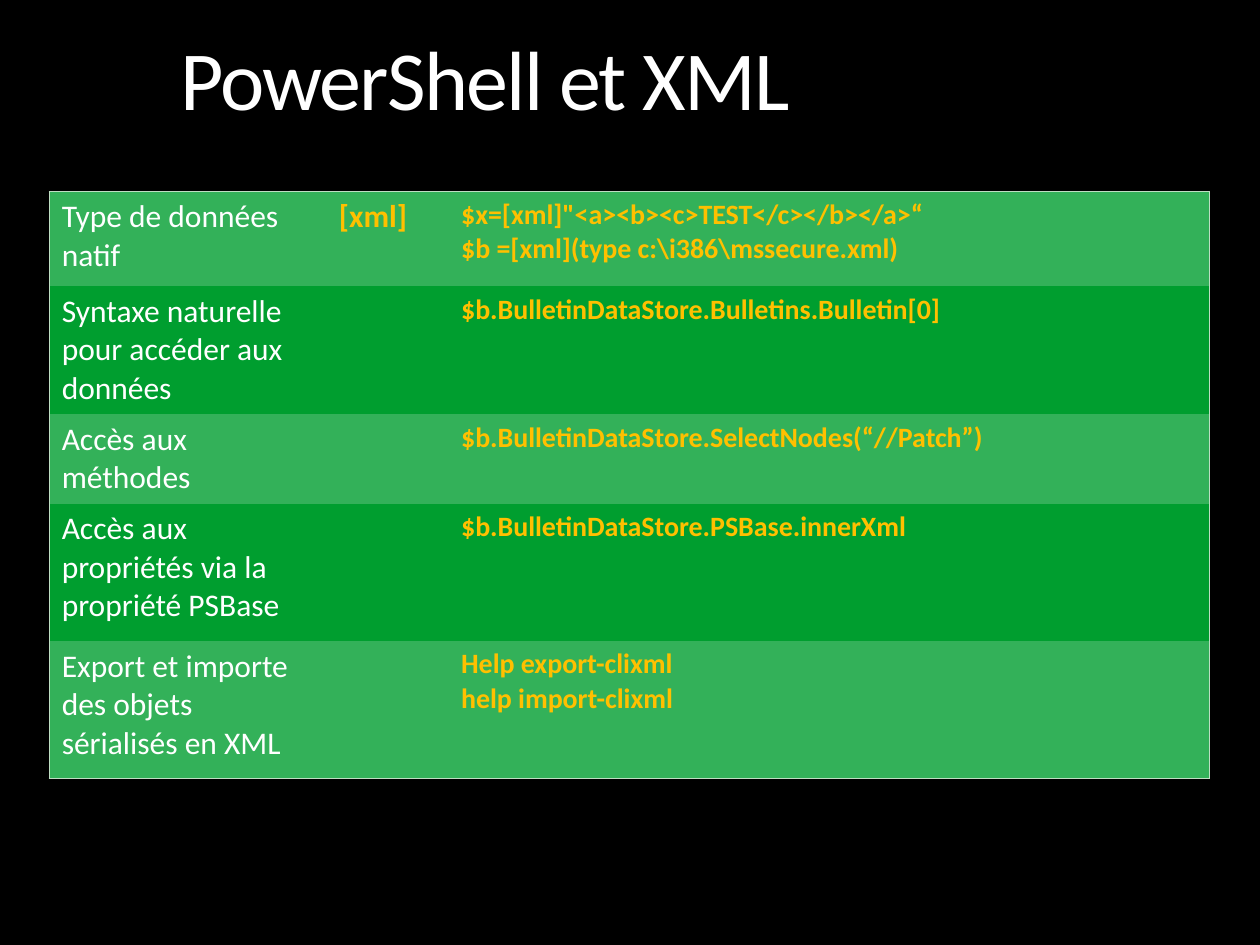
"""Build the slide on PowerShell and XML: a title above a green three-column table."""
from lxml import etree
from pptx import Presentation
from pptx.dml.color import RGBColor
from pptx.enum import text
from pptx.oxml import ns
from pptx.util import Inches, Pt

TITLE = "PowerShell et XML"
FEATURES = [
    ("Type de données natif", "[xml]",
     ['$x=[xml]"<a><b><c>TEST</c></b></a>“', r"$b =[xml](type c:\i386\mssecure.xml)"]),
    ("Syntaxe naturelle pour accéder aux données", "",
     ["$b.BulletinDataStore.Bulletins.Bulletin[0]"]),
    ("Accès aux méthodes", "",
     ["$b.BulletinDataStore.SelectNodes(“//Patch”)"]),
    ("Accès aux propriétés via la propriété PSBase", "",
     ["$b.BulletinDataStore.PSBase.innerXml"]),
    ("Export et importe des objets sérialisés en XML", "",
     ["Help export-clixml", "help import-clixml"]),
]
COLUMN_WIDTHS = [2.2, 0.97, 6.04]
ROW_HEIGHTS = [0.75, 0.94, 0.65, 1.09, 1.09]

FONT = "Calibri"
BLACK = RGBColor(0x00, 0x00, 0x00)
WHITE = RGBColor(0xFF, 0xFF, 0xFF)
GOLD = RGBColor(0xFF, 0xC0, 0x00)
GREEN = RGBColor(0x00, 0x9E, 0x2F)
LIGHT_GREEN = RGBColor(0x33, 0xB1, 0x59)
BORDER = RGBColor(0xBE, 0xDE, 0xC3)


def add_run(paragraph, words, size, color, bold=False):
    run = paragraph.add_run()
    run.text = words
    run.font.name, run.font.size, run.font.bold = FONT, Pt(size), bold
    run.font.color.rgb = color
    return run


def write_lines(cell, lines, size, color, bold):
    for number, line in enumerate(lines):
        paragraph = cell.text_frame.add_paragraph() if number else cell.text_frame.paragraphs[0]
        add_run(paragraph, line, size, color, bold)


def set_borders(cell, visible):
    properties = cell._tc.get_or_add_tcPr()
    for position, side in enumerate("LRTB"):
        line = etree.Element(ns.qn(f"a:ln{side}"), w=str(Pt(0.75)))
        if side in visible:
            fill = etree.SubElement(line, ns.qn("a:solidFill"))
            etree.SubElement(fill, ns.qn("a:srgbClr"), val=str(BORDER))
        else:
            etree.SubElement(line, ns.qn("a:noFill"))
        properties.insert(position, line)


def add_title(slide):
    title = slide.shapes.title
    title.left, title.top, title.width, title.height = map(Inches, (1.33, 0.25, 9, 1.25))
    title.text_frame.vertical_anchor = text.MSO_ANCHOR.TOP
    title.text_frame.auto_size = text.MSO_AUTO_SIZE.NONE
    heading = title.text_frame.paragraphs[0]
    heading.alignment = text.PP_ALIGN.LEFT
    heading.line_spacing = 0.9
    run = add_run(heading, TITLE, 48, WHITE)
    run.font._element.set("spc", "-100")


def add_feature_table(slide):
    last_row, last_column = len(FEATURES) - 1, len(COLUMN_WIDTHS) - 1
    table = slide.shapes.add_table(
        len(FEATURES), len(COLUMN_WIDTHS), Inches(0.39), Inches(1.52),
        Inches(sum(COLUMN_WIDTHS)), Inches(sum(ROW_HEIGHTS))).table
    table.first_row = table.horz_banding = False
    for column, width in zip(table.columns, COLUMN_WIDTHS):
        column.width = Inches(width)
    for r, (feature, keyword, examples) in enumerate(FEATURES):
        table.rows[r].height = Inches(ROW_HEIGHTS[r])
        write_lines(table.cell(r, 0), [feature], 18, WHITE, False)
        if keyword:
            write_lines(table.cell(r, 1), [keyword], 18, GOLD, True)
        write_lines(table.cell(r, 2), examples, 16, GOLD, True)
        for c in range(last_column + 1):
            cell = table.cell(r, c)
            cell.fill.solid()
            cell.fill.fore_color.rgb = GREEN if r % 2 else LIGHT_GREEN
            edges = {"L": c == 0, "R": c == last_column, "T": r == 0, "B": r == last_row}
            set_borders(cell, [side for side, outer in edges.items() if outer])


def main():
    deck = Presentation()
    deck.slide_width, deck.slide_height = Inches(10), Inches(7.5)
    slide = deck.slides.add_slide(deck.slide_layouts[5])
    slide.background.fill.solid()
    slide.background.fill.fore_color.rgb = BLACK
    add_title(slide)
    add_feature_table(slide)
    deck.save("out.pptx")


if __name__ == "__main__":
    main()
